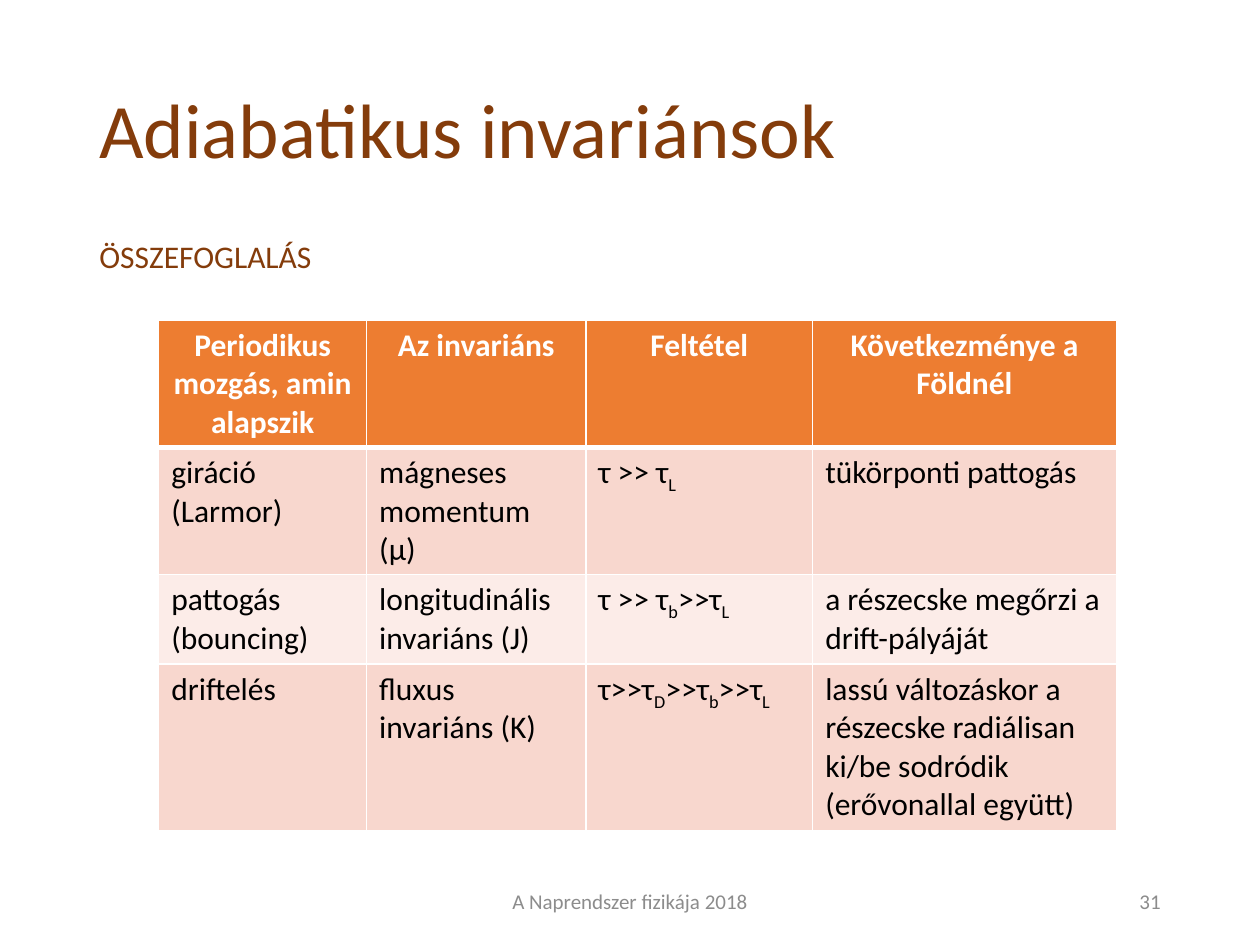
from dataclasses import dataclass

from lxml.etree import SubElement
from pptx import Presentation
from pptx.dml.color import RGBColor
from pptx.enum.text import MSO_ANCHOR, PP_ALIGN
from pptx.oxml.ns import qn
from pptx.util import Inches, Pt


@dataclass(frozen=True)
class Theme:
    font: str = "Calibri"
    heading: str = "843C0B"
    footer: str = "8C8C8C"
    body: str = "000000"
    white: str = "FFFFFF"
    header_fill: str = "ED7D31"
    band_fills: tuple = ("F8D7CE", "FCECE8")
    title_size: int = 44
    body_size: int = 18
    footer_size: int = 12
    border: int = 1
    header_border: int = 3


class SlideBuilder:
    def __init__(self, slide, theme):
        self.slide = slide
        self.theme = theme

    def add_text(self, paragraph, text, size, color, bold=False):
        """Add text run by run: "|" switches subscript on and off, a newline breaks the line."""
        for line_number, line in enumerate(text.split("\n")):
            if line_number:
                paragraph.add_line_break()
            for part_number, part in enumerate(line.split("|")):
                if not part:
                    continue
                run = paragraph.add_run()
                run.text = part
                run.font.name = self.theme.font
                run.font.size = Pt(size)
                run.font.bold = bold
                run.font.color.rgb = RGBColor.from_string(color)
                if part_number % 2:
                    run.font._element.set("baseline", "-25000")

    def text_frame(self, left, top, width, height, anchor):
        box = self.slide.shapes.add_textbox(
            Inches(left), Inches(top), Inches(width), Inches(height))
        box.text_frame.word_wrap = True
        box.text_frame.vertical_anchor = anchor
        return box.text_frame

    def heading(self, title, subtitle):
        theme = self.theme
        frame = self.text_frame(0.69, 0.68, 8.62, 6.49, MSO_ANCHOR.TOP)
        title_line, subtitle_line = frame.paragraphs[0], frame.add_paragraph()
        self.add_text(title_line, title, theme.title_size, theme.heading)
        self.add_text(subtitle_line, subtitle, theme.body_size, theme.heading)
        title_line.line_spacing = subtitle_line.line_spacing = 0.9
        subtitle_line.space_before = Pt(38)

    def footer(self, text, left, width, align):
        frame = self.text_frame(left, 6.95, width, 0.4, MSO_ANCHOR.MIDDLE)
        frame.paragraphs[0].alignment = align
        self.add_text(frame.paragraphs[0], text, self.theme.footer_size, self.theme.footer)

    def cell_borders(self, cell, top, bottom):
        properties = cell._tc.get_or_add_tcPr()
        side = self.theme.border
        for tag, width in (("lnL", side), ("lnR", side), ("lnT", top), ("lnB", bottom)):
            line = SubElement(properties, qn(f"a:{tag}"), w=str(Pt(width)))
            fill = SubElement(line, qn("a:solidFill"))
            SubElement(fill, qn("a:srgbClr"), val=self.theme.white)

    def table(self, rows, left, top, column_widths, row_heights):
        theme = self.theme
        table = self.slide.shapes.add_table(
            len(rows), len(column_widths), Inches(left), Inches(top),
            Inches(sum(column_widths)), Inches(sum(row_heights))).table
        for column, width in zip(table.columns, column_widths):
            column.width = Inches(width)
        for row_number, (texts, height) in enumerate(zip(rows, row_heights)):
            table.rows[row_number].height = Inches(height)
            is_header = row_number == 0
            fill = theme.header_fill if is_header else theme.band_fills[(row_number - 1) % 2]
            above = theme.header_border if row_number == 1 else theme.border
            below = theme.header_border if is_header else theme.border
            for cell, text in zip(table.rows[row_number].cells, texts):
                self.cell_borders(cell, above, below)
                cell.fill.solid()
                cell.fill.fore_color.rgb = RGBColor.from_string(fill)
                paragraph = cell.text_frame.paragraphs[0]
                paragraph.alignment = PP_ALIGN.CENTER if is_header else PP_ALIGN.LEFT
                self.add_text(paragraph, text, theme.body_size,
                              theme.white if is_header else theme.body, bold=is_header)


INVARIANTS = [
    ("Periodikus mozgás, amin alapszik", "Az invariáns", "Feltétel",
     "Következménye a Földnél"),
    ("giráció\n(Larmor)", "mágneses momentum (μ)", "τ >> τ|L|", "tükörponti pattogás"),
    ("pattogás\n(bouncing)", "longitudinális invariáns (J)", "τ >> τ|b|>>τ|L|",
     "a részecske megőrzi a drift-pályáját"),
    ("driftelés", "fluxus invariáns (K)", "τ>>τ|D|>>τ|b|>>τ|L|",
     "lassú változáskor a részecske radiálisan ki/be sodródik (erővonallal együtt)"),
]


def main():
    presentation = Presentation()
    presentation.slide_width = Inches(10)
    presentation.slide_height = Inches(7.5)
    slide = presentation.slides.add_slide(presentation.slide_layouts[6])

    builder = SlideBuilder(slide, Theme())
    builder.heading("Adiabatikus invariánsok", "ÖSSZEFOGLALÁS")
    builder.footer("A Naprendszer fizikája 2018", 3.31, 3.38, PP_ALIGN.CENTER)
    builder.footer("31", 7.06, 2.25, PP_ALIGN.RIGHT)
    builder.table(INVARIANTS, 1.26, 2.54, column_widths=(1.65, 1.74, 1.8, 2.41),
                  row_heights=(1.01, 1.01, 0.71, 1.32))
    presentation.save("out.pptx")


if __name__ == "__main__":
    main()
